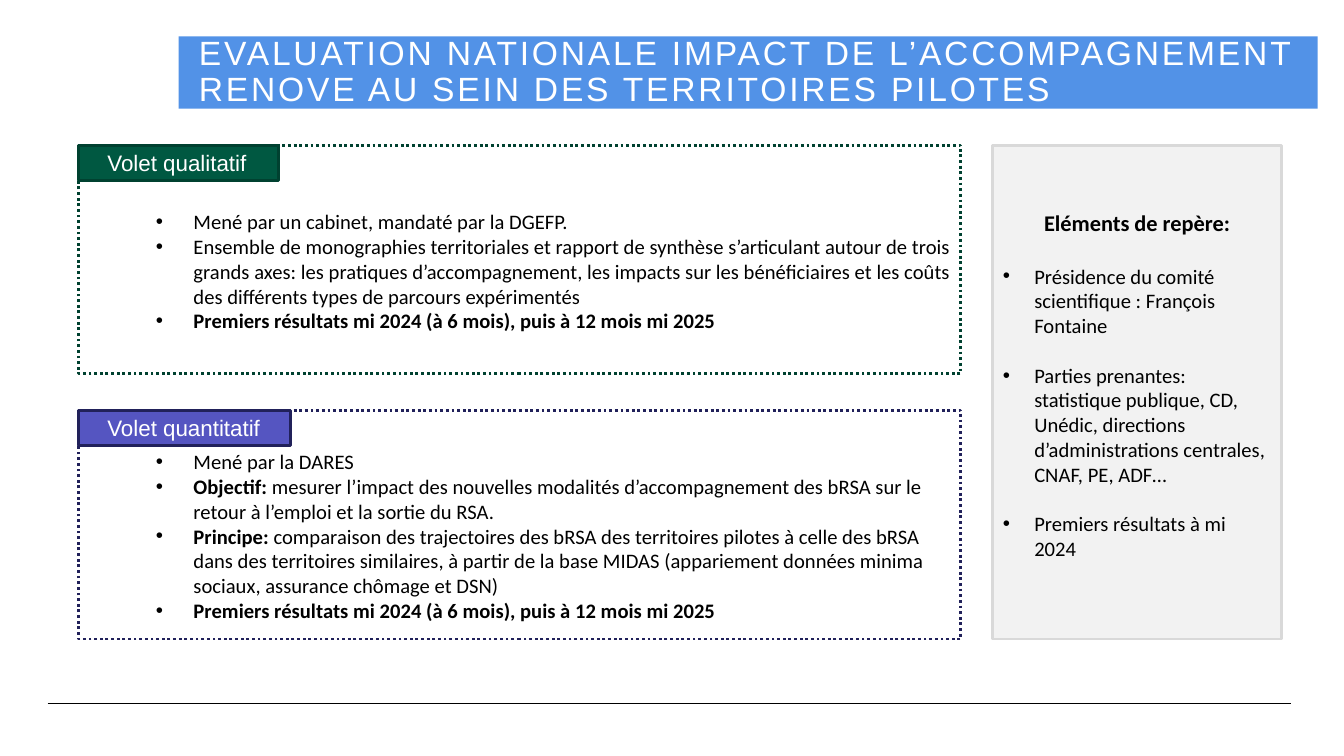
"""Build the slide on the national evaluation of the renewed support scheme."""
from lxml import etree
from pptx import Presentation
from pptx.dml.color import RGBColor
from pptx.enum.dml import MSO_LINE
from pptx.enum.shapes import MSO_CONNECTOR, MSO_SHAPE
from pptx.enum.text import MSO_ANCHOR, PP_ALIGN
from pptx.oxml.ns import qn
from pptx.util import Pt

RECT, STRAIGHT = MSO_SHAPE.RECTANGLE, MSO_CONNECTOR.STRAIGHT
TOP, MIDDLE = MSO_ANCHOR.TOP, MSO_ANCHOR.MIDDLE
LEFT, CENTER, JUSTIFY = PP_ALIGN.LEFT, PP_ALIGN.CENTER, PP_ALIGN.JUSTIFY
DOTTED = MSO_LINE.ROUND_DOT

BLACK = RGBColor(0x00, 0x00, 0x00)
WHITE = RGBColor(0xFF, 0xFF, 0xFF)
BLUE = RGBColor(0x52, 0x92, 0xE7)
GREEN = RGBColor(0x00, 0x58, 0x41)
DARK_GREEN = RGBColor(0x00, 0x41, 0x30)
VIOLET = RGBColor(0x55, 0x55, 0xC1)
DARK_VIOLET = RGBColor(0x21, 0x21, 0x5A)
PALE_GREY = RGBColor(0xF2, 0xF2, 0xF2)
GREY = RGBColor(0xD9, 0xD9, 0xD9)

TITLE = "EVALUATION NATIONALE IMPACT DE L’ACCOMPAGNEMENT RENOVE AU SEIN DES TERRITOIRES PILOTES"
RESULTS = ("Premiers résultats mi 2024 (à 6 mois), puis à 12 mois mi 2025", "", LEFT)
STRANDS = [
    {"label": "Volet qualitatif", "label_width": 142.5, "fill": GREEN, "line": DARK_GREEN,
     "text_top": 45.8, "points": [
         ("", "Mené par un cabinet, mandaté par la DGEFP.", JUSTIFY),
         ("", "Ensemble de monographies territoriales et rapport de synthèse s’articulant autour "
              "de trois grands axes: les pratiques d’accompagnement, les impacts sur les "
              "bénéficiaires et les coûts des différents types de parcours expérimentés", JUSTIFY),
         RESULTS]},
    {"label": "Volet quantitatif", "label_width": 151.2, "fill": VIOLET, "line": DARK_VIOLET,
     "text_top": 27.9, "points": [
         ("", "Mené par la DARES", LEFT),
         ("Objectif: ", "mesurer l’impact des nouvelles modalités d’accompagnement des bRSA sur "
                        "le retour à l’emploi et la sortie du RSA.", LEFT),
         ("Principe: ", "comparaison des trajectoires des bRSA des territoires pilotes à celle "
                        "des bRSA dans des territoires similaires, à partir de la base MIDAS "
                        "(appariement données minima sociaux, assurance chômage et DSN)", LEFT),
         RESULTS]},
]
LANDMARKS_HEADING = "Eléments de repère:"
LANDMARKS = [
    "Présidence du comité scientifique : François Fontaine",
    "Parties prenantes: statistique publique, CD, Unédic, directions d’administrations "
    "centrales, CNAF, PE, ADF…",
    "Premiers résultats à mi 2024",
]

STRAND_LEFT, STRAND_TOP, STRAND_WIDTH, STRAND_HEIGHT = 56.2, 103.7, 630, 163.4
STRAND_PITCH = 189.4
LABEL_HEIGHT = 25.2
BODY_SIZE, HEADING_SIZE, TITLE_SIZE = 14.7, 16, 24
BODY_LINE, HEADING_LINE = 17.9, 19.5


def add_box(slide, place, fill=None, line=None, dash=None, anchor=TOP, insets=(7.2, 3.6, 7.2, 3.6)):
    box = slide.shapes.add_shape(RECT, *(Pt(length) for length in place))
    box.shadow.inherit = False
    if fill is None:
        box.fill.background()
    else:
        box.fill.solid()
        box.fill.fore_color.rgb = fill
    if line is None:
        box.line.fill.background()
    else:
        box.line.color.rgb = line
        box.line.width = Pt(2)
        if dash is not None:
            box.line.dash_style = dash
    frame = box.text_frame
    frame.word_wrap = True
    frame.vertical_anchor = anchor
    frame.margin_left, frame.margin_top, frame.margin_right, frame.margin_bottom = map(Pt, insets)
    return frame


def write(paragraph, parts, size, font="Calibri", color=BLACK, align=LEFT):
    paragraph.alignment = align
    for text, bold in parts:
        if text:
            run = paragraph.add_run()
            run.text = text
            run.font.name, run.font.size, run.font.bold = font, Pt(size), bold
            run.font.color.rgb = color


def add_bullet(paragraph, margin, hanging):
    properties = paragraph._p.get_or_add_pPr()
    properties.set("marL", str(Pt(margin)))
    properties.set("indent", str(-Pt(hanging)))
    etree.SubElement(properties, qn("a:buFont")).set("typeface", "Arial")
    etree.SubElement(properties, qn("a:buChar")).set("char", "•")


def add_strand(slide, strand, top):
    frame = add_box(slide, (STRAND_LEFT, top, STRAND_WIDTH, STRAND_HEIGHT), line=strand["line"],
                    dash=DOTTED, insets=(7.2, strand["text_top"], 7.2, 0))
    for index, (lead, text, align) in enumerate(strand["points"]):
        point = frame.add_paragraph() if index else frame.paragraphs[0]
        add_bullet(point, 74.9, 26.9)
        write(point, [(lead, True), (text, False)], BODY_SIZE, align=align)
    label = add_box(slide, (STRAND_LEFT, top, strand["label_width"], LABEL_HEIGHT), strand["fill"],
                    strand["line"], anchor=MIDDLE, insets=(20.5, 3.6, 7.2, 3.6))
    write(label.paragraphs[0], [(strand["label"], False)], HEADING_SIZE, "Arial", WHITE)


def add_landmarks(slide):
    frame = add_box(slide, (709.2, STRAND_TOP, 206.2, STRAND_PITCH + STRAND_HEIGHT), PALE_GREY,
                    GREY, insets=(7.2, 45.8, 7.2, 0))
    write(frame.paragraphs[0], [(LANDMARKS_HEADING, True)], HEADING_SIZE, align=CENTER)
    for index, text in enumerate(LANDMARKS):
        landmark = frame.add_paragraph()
        landmark.space_before = Pt(BODY_LINE if index else HEADING_LINE)
        add_bullet(landmark, 22.5, 22.5)
        write(landmark, [(text, False)], BODY_SIZE)


def add_title(slide):
    frame = add_box(slide, (127.7, 25.9, 813.6, 51.8), BLUE, anchor=MIDDLE,
                    insets=(14.4, 0, 14.4, 0))
    title = frame.paragraphs[0]
    title.line_spacing = 0.9
    write(title, [(TITLE, False)], TITLE_SIZE, "Arial", WHITE)
    title.runs[0].font._element.set("spc", "200")


def add_footer_rule(slide, left):
    rule = slide.shapes.add_connector(STRAIGHT, Pt(left), Pt(502.6), Pt(left + 884.9), Pt(502.6))
    rule.line.color.rgb = BLACK
    rule.line.width = Pt(0.8)
    etree.SubElement(rule._element.spPr, qn("a:effectLst"))


def main():
    deck = Presentation()
    deck.slide_width, deck.slide_height = Pt(960), Pt(540)
    slide = deck.slides.add_slide(deck.slide_layouts[6])
    for left in (34, 37.4):
        add_footer_rule(slide, left)
    for index, strand in enumerate(STRANDS):
        add_strand(slide, strand, STRAND_TOP + index * STRAND_PITCH)
    add_landmarks(slide)
    add_title(slide)
    deck.save("out.pptx")


if __name__ == "__main__":
    main()
